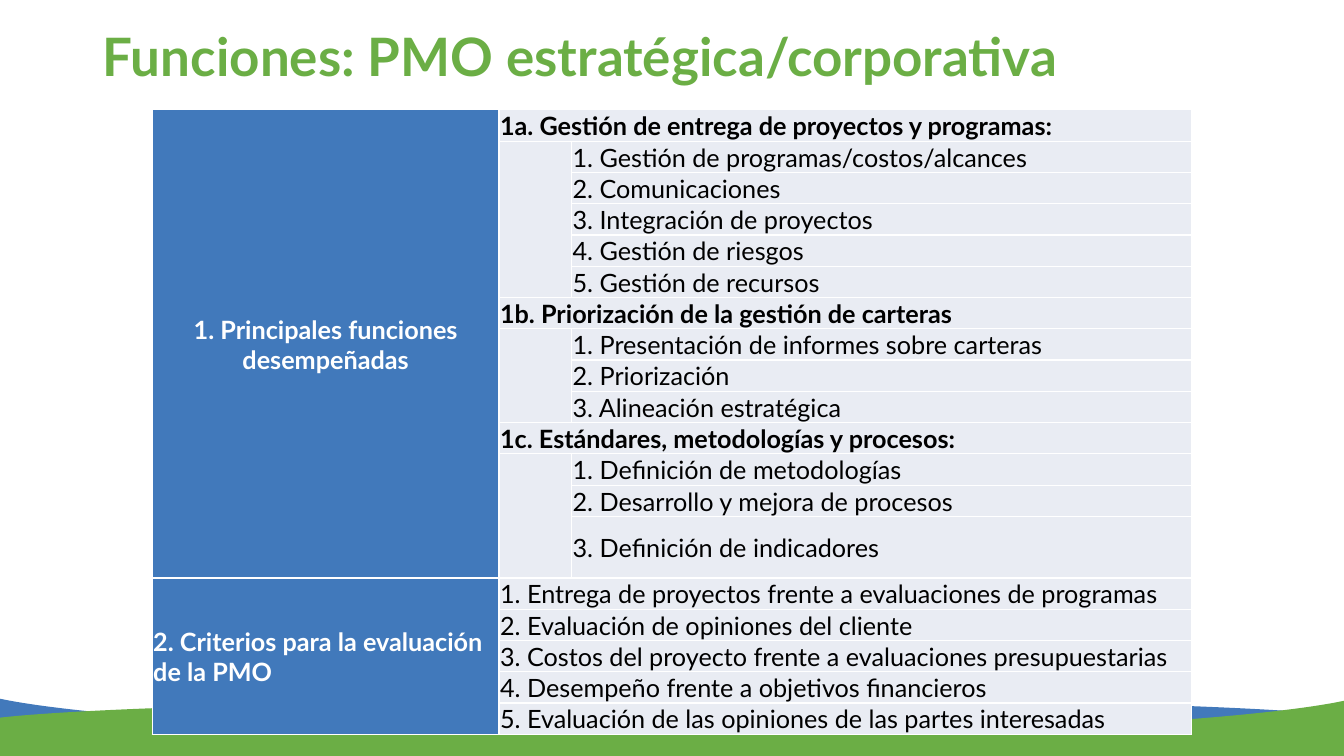
from lxml.etree import SubElement
from pptx import Presentation
from pptx.dml.color import RGBColor
from pptx.enum.text import MSO_ANCHOR, PP_ALIGN
from pptx.oxml.ns import qn
from pptx.util import Inches, Pt

# Content
TITLE = "Funciones: PMO estratégica/corporativa"
FUNCTIONS_LABEL = "1. Principales funciones desempeñadas"
FUNCTIONS = [
    ("1a. Gestión de entrega de proyectos y programas:", [
        "1. Gestión de programas/costos/alcances",
        "2. Comunicaciones",
        "3. Integración de proyectos",
        "4. Gestión de riesgos",
        "5. Gestión de recursos"]),
    ("1b. Priorización de la gestión de carteras", [
        "1. Presentación de informes sobre carteras",
        "2. Priorización",
        "3. Alineación estratégica"]),
    ("1c. Estándares, metodologías y procesos:", [
        "1. Definición de metodologías",
        "2. Desarrollo y mejora de procesos",
        "3. Definición de indicadores"]),
]
CRITERIA_LABEL = "2. Criterios para la evaluación de la PMO"
CRITERIA = [
    "1. Entrega de proyectos frente a evaluaciones de programas",
    "2. Evaluación de opiniones del cliente",
    "3. Costos del proyecto frente a evaluaciones presupuestarias",
    "4. Desempeño frente a objetivos financieros",
    "5. Evaluación de las opiniones de las partes interesadas",
]

# Layout and colours
WIDTH, HEIGHT = 13.33, 7.5
COLUMN_WIDTHS = [3.44, 0.72, 6.15]
TABLE_HEIGHT, TALL_ROW_HEIGHT = 6.17, 0.61
GREEN, WAVE_BLUE, CELL_BLUE = "6BAE45", "4279BB", "4179BB"
PALE, WHITE, BLACK = "E9ECF3", "FFFFFF", "000000"
# Start point, then two control points and an end point for each curve
WAVE = [
    (13.33, 7.1),
    (12.56, 7.01), (10.26, 6.94), (8.7, 6.96),
    (7.15, 6.98), (5.43, 7.22), (3.98, 7.22),
    (2.53, 7.21), (0.68, 7.08), (-0.01, 6.93),
]


def color(value):
    return RGBColor.from_string(value)


def write(frame, text, size=18, fill=BLACK, bold=False, align=PP_ALIGN.LEFT, spacing=None):
    paragraph = frame.paragraphs[0]
    paragraph.alignment = align
    paragraph.line_spacing = spacing
    run = paragraph.add_run()
    run.text = text
    run.font.name = "Lato"
    run.font.size = Pt(size)
    run.font.bold = bold
    run.font.color.rgb = color(fill)


def add_wave(slide, points, fill):
    edge = points + [(points[-1][0], HEIGHT), (points[0][0], HEIGHT)]
    corners = [(Inches(x), Inches(y)) for x, y in edge]
    builder = slide.shapes.build_freeform(*corners[0], scale=1.0)
    builder.add_line_segments(corners[1:], close=True)
    shape = builder.convert_to_shape()
    shape.shadow.inherit = False
    shape.fill.solid()
    shape.fill.fore_color.rgb = color(fill)
    shape.line.fill.background()
    # Turn each three segments of the wave into one Bézier curve
    segments = list(shape._element.iter(qn("a:lnTo")))[:len(points) - 1]
    for start in range(0, len(segments), 3):
        curve = segments[start]
        parent = curve.getparent()
        bezier = SubElement(parent, qn("a:cubicBezTo"))
        parent.replace(curve, bezier)
        for segment in segments[start:start + 3]:
            bezier.append(segment[0])
        for segment in segments[start + 1:start + 3]:
            parent.remove(segment)


def format_cell(cell, fill):
    cell.margin_left = cell.margin_right = cell.margin_top = Inches(0.01)
    cell.margin_bottom = 0
    cell.vertical_anchor = MSO_ANCHOR.MIDDLE
    properties = cell._tc.get_or_add_tcPr()
    for side in ("a:lnL", "a:lnR", "a:lnT", "a:lnB"):
        line = SubElement(properties, qn(side), w=str(Pt(1)))
        SubElement(SubElement(line, qn("a:solidFill")), qn("a:srgbClr"), val=WHITE)
    cell.fill.solid()
    cell.fill.fore_color.rgb = color(fill)


presentation = Presentation()
presentation.slide_width, presentation.slide_height = Inches(WIDTH), Inches(HEIGHT)
slide = presentation.slides.add_slide(presentation.slide_layouts[5])

# Footer waves: the green one mirrors the blue one, slightly lower
add_wave(slide, WAVE, WAVE_BLUE)
add_wave(slide, [(WIDTH - x, y + 0.02) for x, y in WAVE], GREEN)

# Title
title = slide.shapes.title
title.left, title.top = Inches(0.92), Inches(0.31)
title.width, title.height = Inches(11.5), Inches(1.09)
title.text_frame.margin_top = 0
title.text_frame.vertical_anchor = MSO_ANCHOR.TOP
write(title.text_frame, TITLE, size=37.8, fill=GREEN, bold=True, spacing=0.9)

# Table grid
function_rows = sum(1 + len(items) for _, items in FUNCTIONS)
row_count = function_rows + len(CRITERIA)
heights = [(TABLE_HEIGHT - TALL_ROW_HEIGHT) / (row_count - 1)] * row_count
heights[function_rows - 1] = TALL_ROW_HEIGHT
table = slide.shapes.add_table(row_count, len(COLUMN_WIDTHS), Inches(1.51), Inches(1.09),
                               Inches(sum(COLUMN_WIDTHS)), Inches(TABLE_HEIGHT)).table
table.first_row = table.horz_banding = False
for column, width in zip(table.columns, COLUMN_WIDTHS):
    column.width = Inches(width)
for row, height in zip(table.rows, heights):
    row.height = Inches(height)
    for index, cell in enumerate(row.cells):
        format_cell(cell, PALE if index else CELL_BLUE)


def fill_cells(first, last, text=None, **text_format):
    cell = table.cell(*first)
    if first != last:
        cell.merge(table.cell(*last))
    if text:
        write(cell.text_frame, text, **text_format)


# Left-hand labels
fill_cells((0, 0), (function_rows - 1, 0), FUNCTIONS_LABEL,
           fill=WHITE, bold=True, align=PP_ALIGN.CENTER)
fill_cells((function_rows, 0), (row_count - 1, 0), CRITERIA_LABEL, fill=WHITE, bold=True)

# Functions with their indented items, then criteria
row = 0
for heading, items in FUNCTIONS:
    fill_cells((row, 1), (row, 2), heading, bold=True)
    fill_cells((row + 1, 1), (row + len(items), 1))
    for offset, item in enumerate(items, 1):
        fill_cells((row + offset, 2), (row + offset, 2), item)
    row += 1 + len(items)
for row, criterion in enumerate(CRITERIA, function_rows):
    fill_cells((row, 1), (row, 2), criterion)

presentation.save("out.pptx")
